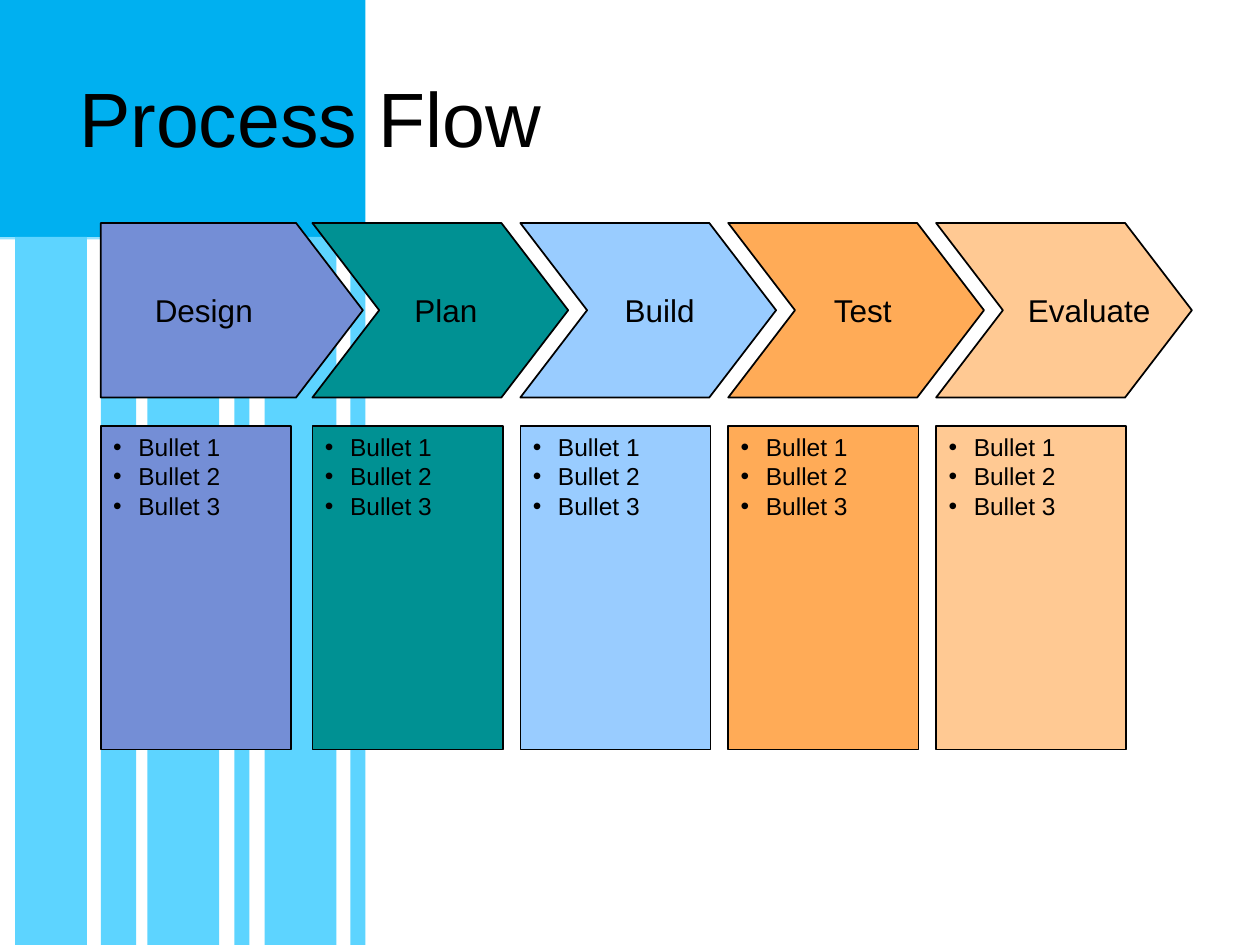
from lxml.etree import SubElement
from pptx import Presentation
from pptx.dml.color import RGBColor
from pptx.enum.shapes import MSO_SHAPE
from pptx.enum.text import MSO_ANCHOR, PP_ALIGN
from pptx.oxml.ns import qn
from pptx.util import Pt

COLORS = {
    "black": "000000", "banner": "00B0F0", "stripe": "5DD4FF", "edge": "93E2FF",
    "indigo": "748ED6", "teal": "009193", "sky": "99CCFF",
    "orange": "FFAB57", "peach": "FFC993",
}
TITLE = "Process Flow"
BULLETS = ["Bullet 1", "Bullet 2", "Bullet 3"]
STEPS = [
    ("Design", "indigo", 81.36, 70.56),
    ("Plan", "teal", 229.68, 50.4),
    ("Build", "sky", 349.92, 54.72),
    ("Test", "orange", 469.44, 49.68),
    ("Evaluate", "peach", 580.32, 84.24),
]
STRIPES = [(8.64, 41.04), (57.6, 20.16), (84.24, 41.04),
           (133.92, 8.64), (151.2, 41.04), (200.16, 8.64)]

SLIDE_W, SLIDE_H = 720, 540
BANNER_W, BANNER_H = 208.8, 135.36
FIRST_LEFT, SECOND_LEFT, PITCH = 57.6, 178.56, 118.8
ARROW_TOP, ARROW_H, TIP = 127.44, 99.72, 38.16
CARD_TOP, CARD_W, CARD_H = 243.36, 108.72, 185.04
INDENT = 14.4

prs = Presentation()
prs.slide_width, prs.slide_height = Pt(SLIDE_W), Pt(SLIDE_H)
s = prs.slides.add_slide(prs.slide_layouts[6])


def rgb(name):
    return RGBColor.from_string(COLORS[name])


def paint(sp, fill, outlined=True):
    sp.shadow.inherit = False
    sp.fill.solid()
    sp.fill.fore_color.rgb = rgb(fill)
    if outlined:
        sp.line.color.rgb = rgb("black")
        sp.line.width = Pt(1)
    else:
        sp.line.fill.background()
    return sp


def add_rect(x, y, w, h, fill, outlined=False):
    sp = s.shapes.add_shape(MSO_SHAPE.RECTANGLE, Pt(x), Pt(y), Pt(w), Pt(h))
    return paint(sp, fill, outlined)


def write(tf, lines, size, **frame):
    for name, value in frame.items():
        setattr(tf, name, value)
    for i, line in enumerate(lines):
        p = tf.paragraphs[0] if i == 0 else tf.add_paragraph()
        p.alignment = PP_ALIGN.LEFT
        r = p.add_run()
        r.text = line
        for name, value in {"size": Pt(size), "name": "Arial"}.items():
            setattr(r.font, name, value)
        r.font.color.rgb = rgb("black")


def add_text(x, y, w, h, text, size, **frame):
    sp = s.shapes.add_textbox(Pt(x), Pt(y), Pt(w), Pt(h))
    write(sp.text_frame, [text], size, **frame)


def add_bullets(tf):
    for p in tf.paragraphs:
        pPr = p._p.get_or_add_pPr()
        pPr.set("marL", str(Pt(INDENT)))
        pPr.set("indent", str(-Pt(INDENT)))
        SubElement(pPr, qn("a:buFont"), typeface="Arial")
        SubElement(pPr, qn("a:buChar"), char="•")


def add_arrow(x, shoulder, notched, fill):
    middle, bottom = ARROW_TOP + ARROW_H / 2, ARROW_TOP + ARROW_H
    points = [(x, ARROW_TOP), (x + shoulder, ARROW_TOP),
              (x + shoulder + TIP, middle), (x + shoulder, bottom), (x, bottom)]
    if notched:
        points.append((x + TIP, middle))
    points = [(Pt(px), Pt(py)) for px, py in points]
    fb = s.shapes.build_freeform(*points[0])
    fb.add_line_segments(points[1:], close=True)
    paint(fb.convert_to_shape(), fill)


add_rect(0, BANNER_H, BANNER_W, 1.44, "edge")
add_rect(0, 0, BANNER_W, BANNER_H, "banner")
for x, w in STRIPES:
    add_rect(x, BANNER_H, w, SLIDE_H - BANNER_H, "stripe")

add_text(38.16, 21.6, 645.84, 90, TITLE, 44,
         word_wrap=True, vertical_anchor=MSO_ANCHOR.MIDDLE)

for i, (label, fill, label_x, label_w) in enumerate(STEPS):
    x = SECOND_LEFT + (i - 1) * PITCH if i else FIRST_LEFT
    card = add_rect(x, CARD_TOP, CARD_W, CARD_H, fill, outlined=True)
    write(card.text_frame, BULLETS, 14,
          word_wrap=True, vertical_anchor=MSO_ANCHOR.TOP)
    add_bullets(card.text_frame)
    add_arrow(x, 108 if i else 111.6, i > 0, fill)
    add_text(label_x, 162.72, label_w, 28.8, label, 18, word_wrap=False)

prs.save("out.pptx")
